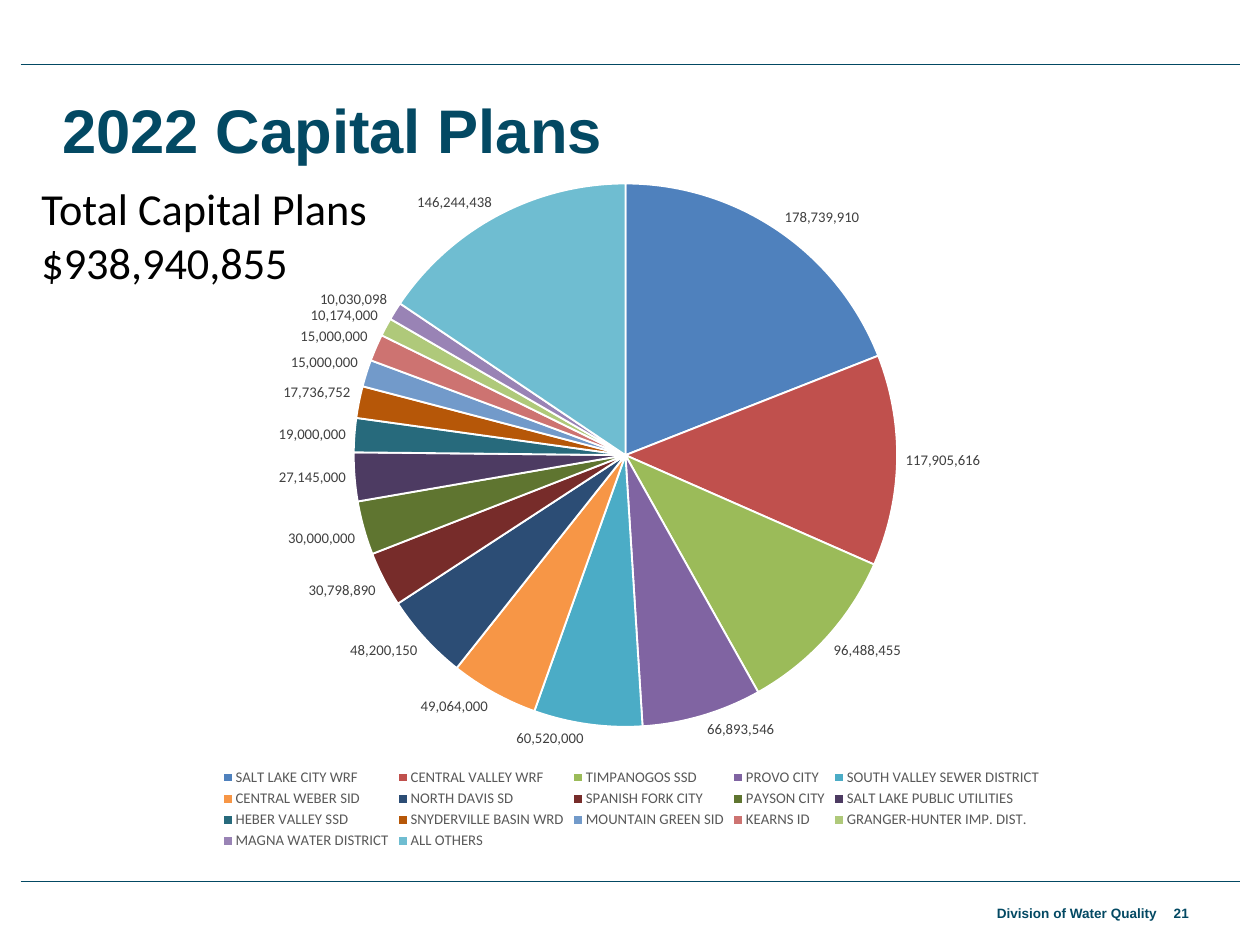
from lxml.etree import SubElement
from pptx import Presentation
from pptx.chart.data import CategoryChartData as ChartData
from pptx.dml.color import RGBColor as RGB
from pptx.enum.chart import XL_CHART_TYPE as ChartType
from pptx.enum.chart import XL_LABEL_POSITION as LabelPos
from pptx.enum.chart import XL_LEGEND_POSITION as LegendPos
from pptx.enum.shapes import MSO_CONNECTOR as Connector
from pptx.enum.text import MSO_ANCHOR as Anchor
from pptx.enum.text import PP_ALIGN as Align
from pptx.oxml import parse_xml
from pptx.oxml.ns import nsdecls, qn
from pptx.util import Pt

COLORS = {"teal": "034963", "black": "000000", "white": "FFFFFF",
          "legend": "595959", "label": "404040"}

FORMATS = {
    "title": {"name": "Arial", "size": Pt(50), "bold": True},
    "footer": {"name": "Arial", "size": Pt(11), "bold": True},
    "total": {"name": "Calibri", "size": Pt(36), "bold": False},
    "chart": {"name": "Calibri", "size": Pt(10), "bold": False},
    "key": {"name": "Calibri", "size": Pt(12), "bold": False},
}

# District, planned capital in dollars, slice colour
PLANS = [
    ("SALT LAKE CITY WRF", 178739910, "4F81BD"),
    ("CENTRAL VALLEY WRF", 117905616, "C0504D"),
    ("TIMPANOGOS SSD", 96488455, "9BBB59"),
    ("PROVO CITY", 66893546, "8064A2"),
    ("SOUTH VALLEY SEWER DISTRICT", 60520000, "4BACC6"),
    ("CENTRAL WEBER SID", 49064000, "F79646"),
    ("NORTH DAVIS SD", 48200150, "2C4D75"),
    ("SPANISH FORK CITY", 30798890, "772C2A"),
    ("PAYSON CITY", 30000000, "5F7530"),
    ("SALT LAKE PUBLIC UTILITIES", 27145000, "4D3B62"),
    ("HEBER VALLEY SSD", 19000000, "276A7C"),
    ("SNYDERVILLE BASIN WRD", 17736752, "B65708"),
    ("MOUNTAIN GREEN SID", 15000000, "729ACA"),
    ("KEARNS ID", 15000000, "CD7371"),
    ("GRANGER-HUNTER IMP. DIST.", 10174000, "AFC97A"),
    ("MAGNA WATER DISTRICT", 10030098, "9983B5"),
    ("ALL OTHERS", 146244438, "6FBDD1"),
]

# Pie area as fractions of the chart frame
PIE_AREA = {"x": 0.26, "y": 0.03, "w": 0.47, "h": 0.79}


class SlideBuilder:
    """Holds the slide, its colours and its text formats."""

    def __init__(self, slide, colors, formats):
        self.slide = slide
        self.colors = colors
        self.formats = formats

    def color(self, name):
        return RGB.from_string(self.colors[name])

    def style(self, font, format_name, color):
        for key, value in self.formats[format_name].items():
            setattr(font, key, value)
        font.color.rgb = self.color(color)

    def rule(self, left, right, y):
        line = self.slide.shapes.add_connector(
            Connector.STRAIGHT, Pt(left), Pt(y), Pt(right), Pt(y))
        line.line.color.rgb = self.color("teal")
        line.line.width = Pt(0.5)
        SubElement(line._element.spPr, qn("a:effectLst"))

    def fill_text(self, shape, words, format_name, color, align, anchor, wrap):
        frame = shape.text_frame
        frame.word_wrap = wrap
        frame.vertical_anchor = anchor
        paragraph = frame.paragraphs[0]
        paragraph.alignment = align
        run = paragraph.add_run()
        run.text = words
        self.style(run.font, format_name, color)

    def title(self, words, box):
        heading = self.slide.shapes.title
        for side, length in zip(("left", "top", "width", "height"), box):
            setattr(heading, side, Pt(length))
        self.fill_text(heading, words, "title", "teal",
                       Align.LEFT, Anchor.MIDDLE, True)

    def text(self, words, box, format_name, color,
             align=Align.LEFT, anchor=Anchor.TOP, wrap=True, inset=7.2):
        label = self.slide.shapes.add_textbox(*map(Pt, box))
        label.text_frame.margin_left = label.text_frame.margin_right = Pt(inset)
        self.fill_text(label, words, format_name, color, align, anchor, wrap)

    def pie(self, plans, box, area):
        data = ChartData()
        data.categories = [district for district, _, _ in plans]
        data.add_series("Series 1", [amount for _, amount, _ in plans])
        chart = self.slide.shapes.add_chart(
            ChartType.PIE, *map(Pt, box), data).chart
        chart.has_title = False
        self.style(chart.font, "chart", "black")

        chart.has_legend = True
        chart.legend.position = LegendPos.BOTTOM
        chart.legend.include_in_layout = False
        self.style(chart.legend.font, "key", "legend")

        plot = chart.plots[0]
        plot.vary_by_categories = True
        for index, (_, _, fill) in enumerate(plans):
            piece = plot.series[0].points[index].format
            piece.fill.solid()
            piece.fill.fore_color.rgb = RGB.from_string(fill)
            piece.line.color.rgb = self.color("white")
            piece.line.width = Pt(1.5)

        plot.has_data_labels = True
        labels = plot.data_labels
        options = {"show_value": True, "position": LabelPos.OUTSIDE_END,
                   "number_format": "_(* #,##0_)", "number_format_is_linked": False}
        for key, value in options.items():
            setattr(labels, key, value)
        self.style(labels.font, "key", "label")
        self.place_plot(chart, area)

    def place_plot(self, chart, area):
        """Fix the plot area and leave the chart background clear."""
        space = chart._chartSpace
        plot_area = space.find(".//" + qn("c:plotArea"))
        for layout in plot_area.findall(qn("c:layout")):
            plot_area.remove(layout)
        modes = "".join(f'<c:{key}Mode val="edge"/>' for key in "xy")
        sizes = "".join(f'<c:{key} val="{value}"/>' for key, value in area.items())
        plot_area.insert(0, parse_xml(
            f'<c:layout {nsdecls("c")}><c:manualLayout>'
            f'<c:layoutTarget val="inner"/>{modes}{sizes}'
            '</c:manualLayout></c:layout>'))
        space.find(qn("c:chart")).addnext(parse_xml(
            f'<c:spPr {nsdecls("c", "a")}><a:noFill/>'
            '<a:ln><a:noFill/></a:ln></c:spPr>'))


def main():
    deck = Presentation()
    deck.slide_width, deck.slide_height = Pt(1024), Pt(768)
    builder = SlideBuilder(
        deck.slides.add_slide(deck.slide_layouts[5]), COLORS, FORMATS)

    for y in (52, 716.5):
        builder.rule(16.8, 1008, y)
    builder.text("Division of Water Quality", (805.7, 731.5, 139, 21.6),
                 "footer", "teal", Align.RIGHT, Anchor.MIDDLE, False, 4.3)
    builder.pie(PLANS, (43.2, 131, 939.6, 562.3), PIE_AREA)
    builder.title("2022 Capital Plans", (43.2, 64.8, 939.6, 79.2))
    builder.text("21", (946.8, 716.4, 61.2, 51.8),
                 "footer", "teal", anchor=Anchor.MIDDLE)
    builder.text("Total Capital Plans $938,940,855", (26.6, 144, 311.8, 94.3),
                 "total", "black")
    deck.save("out.pptx")


if __name__ == "__main__":
    main()
